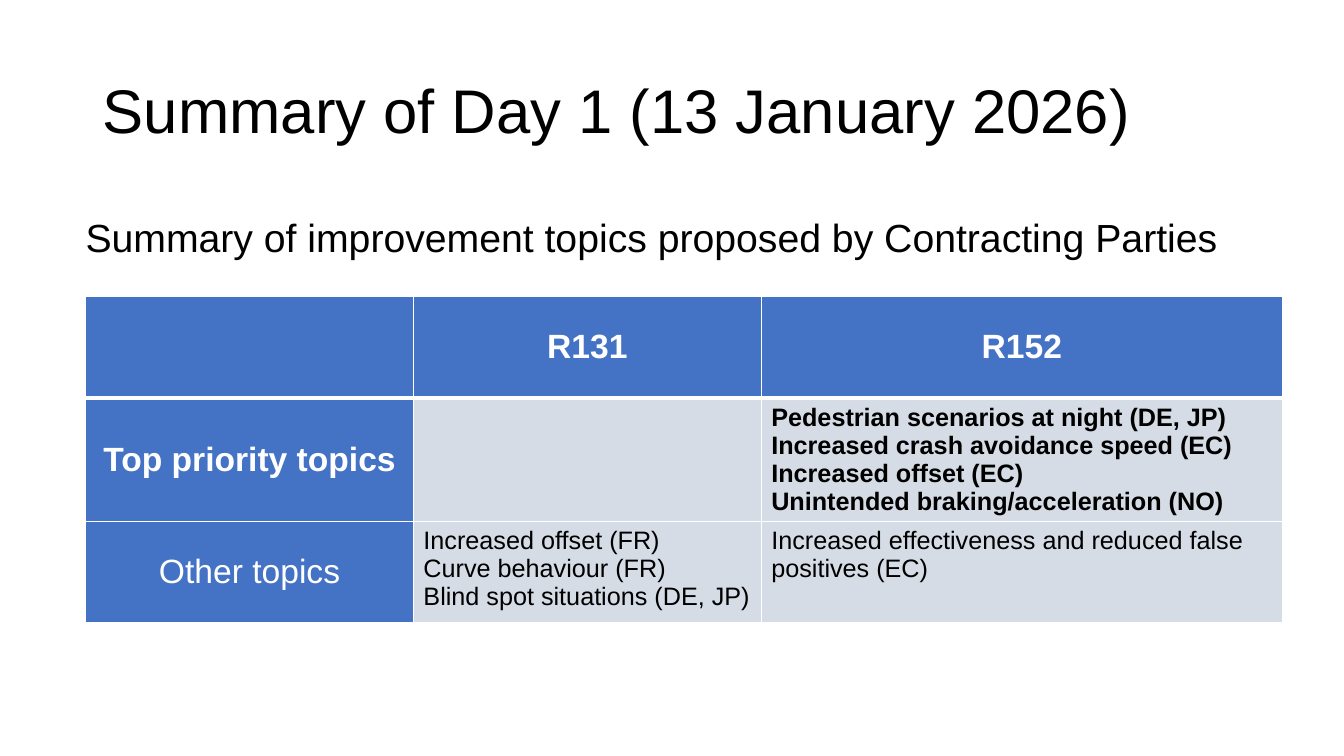
from lxml.etree import SubElement
from pptx import Presentation
from pptx.dml.color import RGBColor as RGB
from pptx.enum.text import MSO_ANCHOR as Anchor, MSO_AUTO_SIZE as AutoSize, PP_ALIGN as Align
from pptx.oxml.ns import qn
from pptx.util import Inches, Pt

COLORS = {"black": "000000", "white": "FFFFFF", "head": "4472C4", "body": "D6DCE5"}
HEAD = {"size": Pt(24), "bold": True, "color": "white"}
ITEM = {"size": Pt(18), "bold": False, "color": "black"}
TOPICS = [
    ["", "R131", "R152"],
    ["Top priority topics", "",
     "Pedestrian scenarios at night (DE, JP)\nIncreased crash avoidance speed (EC)\n"
     "Increased offset (EC)\nUnintended braking/acceleration (NO)"],
    ["Other topics",
     "Increased offset (FR)\nCurve behaviour (FR)\nBlind spot situations (DE, JP)",
     "Increased effectiveness and reduced false positives (EC)"],
]


class SlideBuilder:
    """Holds the font and the current slide, and adds elements to it."""

    def __init__(self, prs, font="Arial"):
        self.font = font
        self.s = prs.slides.add_slide(prs.slide_layouts[5])

    def fill_text(self, tf, text, fmt, align=Align.LEFT, spacing=1.0):
        """Fill a text frame with one paragraph per line of text."""
        tf.text = text
        for p in tf.paragraphs:
            p.alignment, p.line_spacing = align, spacing
            for target in [p.font] + [r.font for r in p.runs]:
                target.name = self.font
                for name, value in fmt.items():
                    if name == "color":
                        target.color.rgb = RGB.from_string(COLORS[value])
                    else:
                        setattr(target, name, value)

    def title(self, text, x, y, w, h):
        """Place and format the title placeholder."""
        sp = self.s.shapes.title
        sp.left, sp.top, sp.width, sp.height = map(Inches, (x, y, w, h))
        tf = sp.text_frame
        tf.auto_size, tf.vertical_anchor = AutoSize.NONE, Anchor.MIDDLE
        self.fill_text(tf, text, {"size": Pt(44), "color": "black"}, spacing=0.9)

    def text(self, text, x, y, w, h):
        """Add a wrapped text box."""
        tf = self.s.shapes.add_textbox(*map(Inches, (x, y, w, h))).text_frame
        tf.word_wrap, tf.auto_size = True, AutoSize.SHAPE_TO_FIT_TEXT
        self.fill_text(tf, text, {"size": Pt(28), "color": "black"})

    def borders(self, cell, widths):
        """Draw white borders of the given point widths around a cell."""
        tc_pr = cell._tc.get_or_add_tcPr()
        for side, width in widths.items():
            ln = SubElement(tc_pr, qn(f"a:ln{side}"), w=str(Pt(width)))
            fill = SubElement(ln, qn("a:solidFill"))
            SubElement(fill, qn("a:srgbClr"), val=COLORS["white"])

    def table(self, rows, x, y, widths, row_height):
        """Add a table with a header row and a header column."""
        size = (sum(widths), row_height * len(rows))
        frame = self.s.shapes.add_table(
            len(rows), len(widths), *map(Inches, (x, y, *size)))
        table = frame.table
        for column, width in zip(table.columns, widths):
            column.width = Inches(width)
        for i, row in enumerate(rows):
            table.rows[i].height = Inches(row_height)
            for j, text in enumerate(row):
                cell = table.cell(i, j)
                is_head = i == 0 or j == 0
                self.borders(cell, {"L": 1, "R": 1, "T": 3 if i == 1 else 1,
                                    "B": 3 if i == 0 else 1})
                cell.fill.solid()
                cell.fill.fore_color.rgb = RGB.from_string(COLORS["head" if is_head else "body"])
                cell.vertical_anchor = Anchor.MIDDLE if is_head else Anchor.TOP
                fmt = {**(HEAD if is_head else ITEM), "bold": i < 2}
                self.fill_text(cell.text_frame, text, fmt,
                               Align.CENTER if is_head else Align.LEFT)


def main():
    """Build the summary slide."""
    prs = Presentation()
    prs.slide_width, prs.slide_height = Inches(13.33), Inches(7.5)
    slide = SlideBuilder(prs)
    slide.title("Summary of Day 1 (13 January 2026)", 0.92, 0.4, 11.5, 1.45)
    slide.table(TOPICS, 0.85, 2.94, [3.25, 3.45, 5.17], 1.01)
    slide.text("Summary of improvement topics proposed by Contracting Parties",
               0.75, 2.07, 12.25, 0.57)
    prs.save("out.pptx")


if __name__ == "__main__":
    main()
